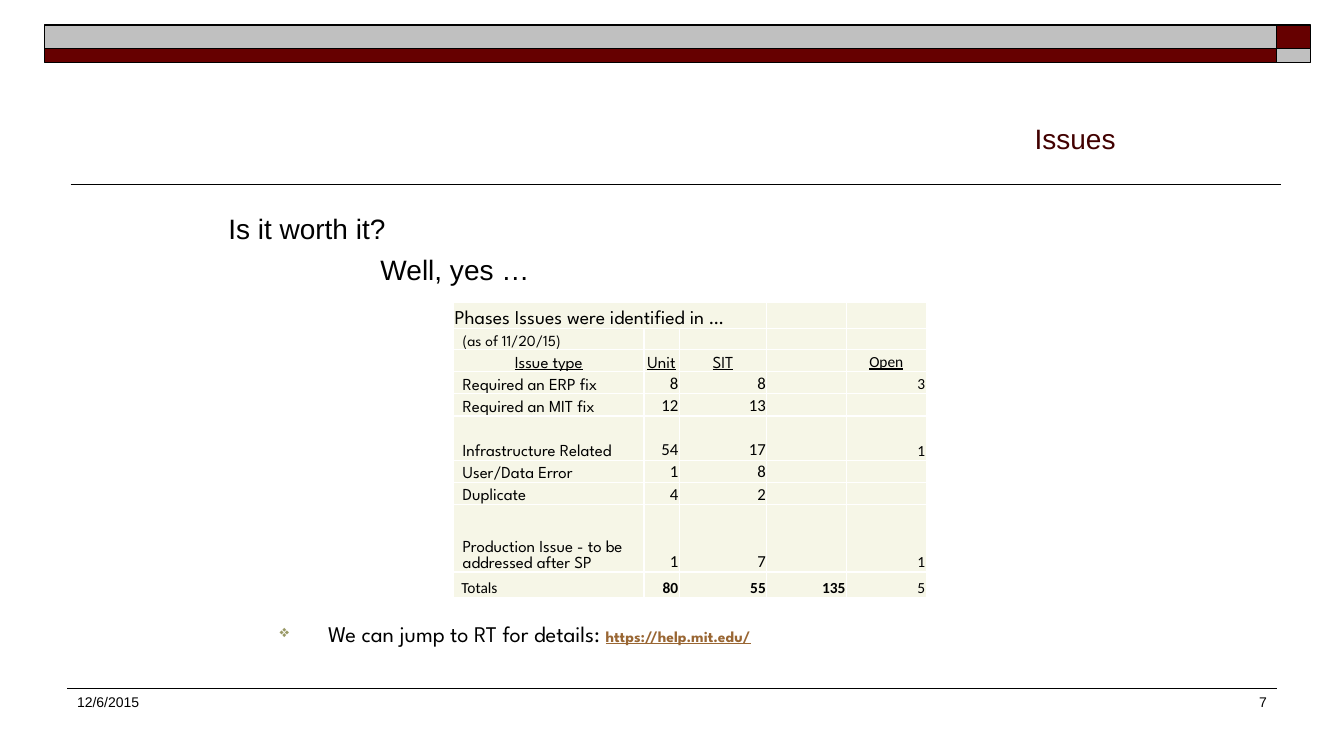
"""Build the Issues slide with its table of issue counts by phase."""
from dataclasses import dataclass

import pptx
import pptx.dml.color
import pptx.enum.shapes
import pptx.enum.text
import pptx.oxml.ns
import pptx.oxml.xmlchemy
import pptx.slide
import pptx.table
import pptx.text.text
import pptx.util
from lxml import etree

Pt = pptx.util.Pt
RGBColor = pptx.dml.color.RGBColor
ALIGN = pptx.enum.text.PP_ALIGN
ANCHOR = pptx.enum.text.MSO_ANCHOR
qn = pptx.oxml.ns.qn

BLACK = RGBColor(0x00, 0x00, 0x00)
WHITE = RGBColor(0xFF, 0xFF, 0xFF)
MAROON = RGBColor(0x66, 0x00, 0x00)
SILVER = RGBColor(0xC0, 0xC0, 0xC0)
TITLE = RGBColor(0x42, 0x00, 0x00)
CREAM = RGBColor(0xF6, 0xF6, 0xE7)
OLIVE = RGBColor(0x99, 0x99, 0x66)
LINK = RGBColor(0x99, 0x66, 0x33)

ARIAL = "Arial"
CALIBRI = "Calibri"
SPARTAN = "League Spartan"


@dataclass
class Band:
    left: float
    top: float
    width: float
    height: float
    color: RGBColor


@dataclass
class Rule:
    left: float
    right: float
    y: float
    weight: float


@dataclass
class Label:
    text: str
    left: float
    top: float
    width: float
    height: float
    size: float
    font: str = ARIAL
    color: RGBColor = BLACK
    align: ALIGN = ALIGN.LEFT
    anchor: ANCHOR = ANCHOR.TOP
    inset: float = 3.6


@dataclass
class CellText:
    text: str
    size: float
    font: str = CALIBRI
    align: ALIGN = ALIGN.RIGHT
    inset: float = 0.72
    bold: bool = False
    underline: bool = False


BANDS = [
    Band(912, 18, 24, 16.5, MAROON),
    Band(32, 18, 880, 16.5, SILVER),
    Band(32, 34.5, 880, 10, MAROON),
    Band(912, 34.5, 24, 10, SILVER),
]
RULES = [Rule(50.4, 915, 131.8, 1), Rule(48, 912, 492, 0.75)]
DATE = Label("12/6/2015", 48, 492, 176, 36, 10)
NUMBER = Label("7", 712, 492, 200, 36, 10, align=ALIGN.RIGHT)
HEADING = Label("Issues", 156, 42, 648, 72, 20, color=TITLE,
                align=ALIGN.RIGHT, anchor=ANCHOR.BOTTOM)
QUESTION = Label("Is it worth it?", 156, 147.6, 648, 64, 20)
DETAILS = Label("We can jump to RT for details: ", 156, 443, 648, 24, 16, SPARTAN, inset=0)

COLUMN_WIDTHS = [136, 25.2, 62.6, 56.9, 56.9]
ROW_HEIGHTS = [18.7, 15.1, 15.8, 15.8, 15.8, 31.7, 15.8, 15.8, 48.2, 18]
HEADERS = ["Issue type", "Unit", "SIT", "", "Open"]
ISSUES = [
    ["Required an ERP fix", "8", "8", "", "3"],
    ["Required an MIT fix", "12", "13", "", ""],
    ["Infrastructure Related", "54", "17", "", "1"],
    ["User/Data Error", "1", "8", "", ""],
    ["Duplicate", "4", "2", "", ""],
    ["Production Issue - to be addressed after SP", "1", "7", "", "1"],
]
TOTALS = ["Totals", "80", "55", "135", "5"]


def style_run(r: pptx.text.text._Run, size: float, font: str, color: RGBColor,
              bold: bool = False, underline: bool = False) -> None:
    r.font.size, r.font.name = Pt(size), font
    r.font.bold, r.font.underline = bold, underline
    r.font.color.rgb = color


def add_band(s: pptx.slide.Slide, band: Band) -> None:
    sp = s.shapes.add_shape(pptx.enum.shapes.MSO_SHAPE.RECTANGLE, Pt(band.left),
                            Pt(band.top), Pt(band.width), Pt(band.height))
    sp.shadow.inherit = False
    sp.fill.solid()
    sp.fill.fore_color.rgb = band.color
    sp.line.color.rgb = BLACK
    sp.line.width = Pt(1)


def add_rule(s: pptx.slide.Slide, rule: Rule) -> None:
    line = s.shapes.add_connector(pptx.enum.shapes.MSO_CONNECTOR.STRAIGHT, Pt(rule.left),
                                  Pt(rule.y), Pt(rule.right), Pt(rule.y))
    line.line.color.rgb = BLACK
    line.line.width = Pt(rule.weight)
    etree.SubElement(line._element.spPr, qn("a:effectLst"))


def add_label(s: pptx.slide.Slide, label: Label) -> pptx.text.text.TextFrame:
    sp = s.shapes.add_textbox(Pt(label.left), Pt(label.top), Pt(label.width), Pt(label.height))
    tf = sp.text_frame
    tf.word_wrap = True
    tf.vertical_anchor = label.anchor
    tf.margin_top = tf.margin_bottom = Pt(label.inset)
    tf.text = label.text
    p = tf.paragraphs[0]
    p.alignment = label.align
    style_run(p.runs[0], label.size, label.font, label.color)
    return tf


def set_indent(p: pptx.text.text._Paragraph, left: float, first: float = 0) -> etree._Element:
    pPr = p._p.get_or_add_pPr()
    pPr.set("marL", str(int(Pt(left))))
    pPr.set("indent", str(int(Pt(first))))
    return pPr


def add_bullet(p: pptx.text.text._Paragraph) -> None:
    pPr = set_indent(p, 71.3, -34.6)
    color = etree.SubElement(pPr, qn("a:buClr"))
    etree.SubElement(color, qn("a:srgbClr"), val=str(OLIVE))
    etree.SubElement(pPr, qn("a:buSzPct"), val="75000")
    etree.SubElement(pPr, qn("a:buChar"), char="❖")


def add_borders(cell: pptx.table._Cell) -> None:
    tcPr = cell._tc.get_or_add_tcPr()
    for side in ("a:lnL", "a:lnR", "a:lnT", "a:lnB"):
        ln = etree.SubElement(tcPr, qn(side), w=str(int(Pt(1))))
        fill = etree.SubElement(ln, qn("a:solidFill"))
        etree.SubElement(fill, qn("a:srgbClr"), val=str(WHITE))


def fill_cell(cell: pptx.table._Cell, content: CellText) -> None:
    add_borders(cell)
    cell.fill.solid()
    cell.fill.fore_color.rgb = CREAM
    cell.vertical_anchor = ANCHOR.BOTTOM
    cell.margin_left = Pt(content.inset)
    cell.margin_right = cell.margin_top = Pt(0.72)
    cell.margin_bottom = 0
    p = cell.text_frame.paragraphs[0]
    p.alignment = content.align
    if content.text:
        p.text = content.text
        style_run(p.runs[0], content.size, content.font, BLACK, content.bold, content.underline)
    else:
        etree.SubElement(p._p, qn("a:endParaRPr"), sz="1000")


def table_rows() -> list[list[CellText]]:
    blank = CellText("", 10)
    left, center = ALIGN.LEFT, ALIGN.CENTER
    rows = [[CellText("Phases Issues were identified in …", 14, SPARTAN, left)] + [blank] * 4,
            [CellText("(as of 11/20/15)", 11, SPARTAN, left, 6.5)] + [blank] * 4]
    headers = [CellText(text, 12, SPARTAN, center, underline=True) for text in HEADERS[:-1]]
    rows.append(headers + [CellText(HEADERS[-1], 11, align=center, underline=True)])
    for name, unit, sit, both, still_open in ISSUES:
        rows.append([CellText(name, 12, SPARTAN, left, 6.5), CellText(unit, 12),
                     CellText(sit, 12), CellText(both, 12), CellText(still_open, 11)])
    sums = [CellText(text, 11, bold=True) for text in TOTALS[1:-1]]
    rows.append([CellText(TOTALS[0], 11, align=left, inset=5.5), *sums, CellText(TOTALS[-1], 11)])
    return rows


def add_issue_table(s: pptx.slide.Slide) -> None:
    frame = s.shapes.add_table(len(ROW_HEIGHTS), len(COLUMN_WIDTHS), Pt(324), Pt(216),
                               Pt(sum(COLUMN_WIDTHS)), Pt(sum(ROW_HEIGHTS)))
    table = frame.table
    table.first_row = table.horz_banding = False
    for column, width in zip(table.columns, COLUMN_WIDTHS):
        column.width = Pt(width)
    for row, height, contents in zip(table.rows, ROW_HEIGHTS, table_rows()):
        row.height = Pt(height)
        for cell, content in zip(row.cells, contents):
            fill_cell(cell, content)
    table.cell(0, 0).merge(table.cell(0, 2))


def main() -> None:
    prs = pptx.Presentation()
    prs.slide_width, prs.slide_height = Pt(960), Pt(540)
    s = prs.slides.add_slide(prs.slide_layouts[6])
    for rule in RULES:
        add_rule(s, rule)
    for band in BANDS:
        add_band(s, band)
    for label in (DATE, NUMBER, HEADING):
        add_label(s, label)
    p = add_label(s, QUESTION).add_paragraph()
    p.text = "Well, yes …"
    p.space_before = Pt(5.5)
    set_indent(p, 108.7)
    style_run(p.runs[0], 20, ARIAL, BLACK)
    p = add_label(s, DETAILS).paragraphs[0]
    add_bullet(p)
    r = p.add_run()
    r.text = "https://help.mit.edu/"
    style_run(r, 11, SPARTAN, LINK, bold=True, underline=True)
    add_issue_table(s)
    prs.save("out.pptx")


if __name__ == "__main__":
    main()
